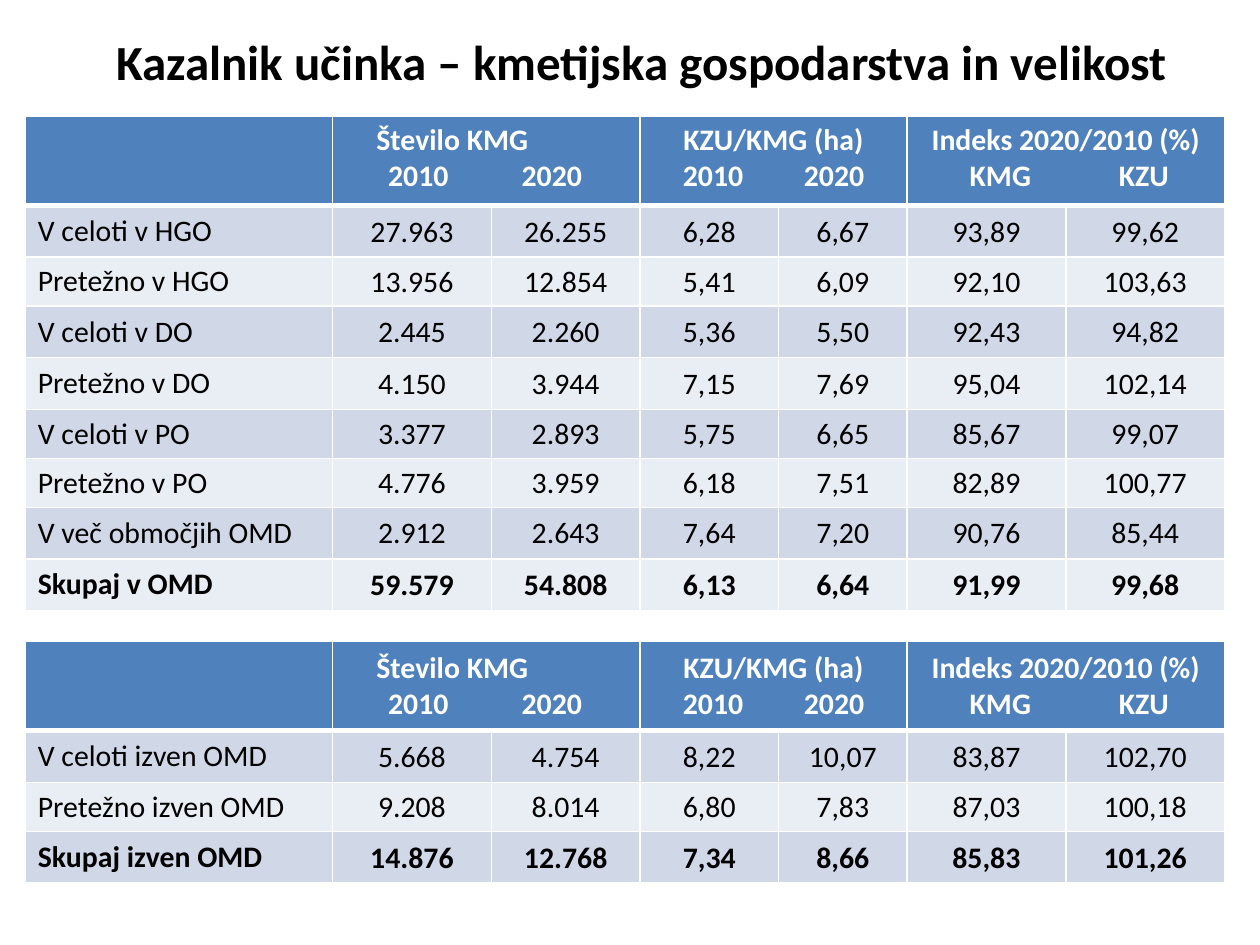
from dataclasses import dataclass

from lxml.etree import SubElement
from pptx import Presentation
from pptx.dml.color import RGBColor as RGB
from pptx.enum.text import MSO_ANCHOR as Anchor, PP_ALIGN as Align
from pptx.oxml.ns import qn
from pptx.util import Inches, Pt


@dataclass(frozen=True)
class Theme:
    font: str = "Calibri"
    title_size: int = 28
    table_size: int = 17
    dark: str = "000000"
    light: str = "FFFFFF"
    header: str = "4F81BD"
    bands: tuple = ("D0D8E8", "E9EDF4")


THEME = Theme()
COLS = (2.44, 1.26, 1.18, 1.1, 1.02, 1.26, 1.26)

# Each group: heading, its tab stop (None = centred), two subheadings, their tab stops
COUNT = ("Število KMG", 0.85, ("2010", "2020"), (0.58, 1.64))
AREA = ("KZU/KMG (ha)", None, ("2010", "2020"), (0.48, 1.44))
INDEX = ("Indeks 2020/2010 (%)", None, ("KMG", "KZU"), (0.64, 1.78))

INSIDE = (
    ("V celoti v HGO", "27.963", "26.255", "6,28", "6,67", "93,89", "99,62"),
    ("Pretežno v HGO", "13.956", "12.854", "5,41", "6,09", "92,10", "103,63"),
    ("V celoti v DO", "2.445", "2.260", "5,36", "5,50", "92,43", "94,82"),
    ("Pretežno v DO", "4.150", "3.944", "7,15", "7,69", "95,04", "102,14"),
    ("V celoti v PO", "3.377", "2.893", "5,75", "6,65", "85,67", "99,07"),
    ("Pretežno v PO", "4.776", "3.959", "6,18", "7,51", "82,89", "100,77"),
    ("V več območjih OMD", "2.912", "2.643", "7,64", "7,20", "90,76", "85,44"),
    ("Skupaj v OMD", "59.579", "54.808", "6,13", "6,64", "91,99", "99,68"),
)
OUTSIDE = (
    ("V celoti izven OMD", "5.668", "4.754", "8,22", "10,07", "83,87", "102,70"),
    ("Pretežno izven OMD", "9.208", "8.014", "6,80", "7,83", "87,03", "100,18"),
    ("Skupaj izven OMD", "14.876", "12.768", "7,34", "8,66", "85,83", "101,26"),
)


def style_text(p, size, color, bold):
    for r in p.runs:
        r.font.name = THEME.font
        r.font.size = Pt(size)
        r.font.bold = bold
        r.font.color.rgb = RGB.from_string(color)


def style_cell(cell, color, top=1, bottom=1):
    """White borders, which must precede the fill in the XML."""
    tc_pr = cell._tc.get_or_add_tcPr()
    for side, width in (("L", 1), ("R", 1), ("T", top), ("B", bottom)):
        ln = SubElement(tc_pr, qn(f"a:ln{side}"), w=str(Pt(width)))
        fill = SubElement(ln, qn("a:solidFill"))
        SubElement(fill, qn("a:srgbClr"), val=THEME.light)
    cell.fill.solid()
    cell.fill.fore_color.rgb = RGB.from_string(color)


def set_tabbed(p, words, stops):
    """Centre each word on its own tab stop."""
    p.text = "".join("\t" + word for word in words)
    p.alignment = Align.LEFT
    tabs = SubElement(p._p.get_or_add_pPr(), qn("a:tabLst"))
    for stop in stops:
        SubElement(tabs, qn("a:tab"), pos=str(Inches(stop)), algn="ctr")


def fill_group(cell, group):
    heading, stop, words, stops = group
    tf = cell.text_frame
    p = tf.paragraphs[0]
    if stop is None:
        p.text = heading
        p.alignment = Align.CENTER
    else:
        set_tabbed(p, [heading], [stop])
    set_tabbed(tf.add_paragraph(), words, stops)
    for p in tf.paragraphs:
        style_text(p, THEME.table_size, THEME.light, True)


def fill_row(table, i, row, bold):
    for j, value in enumerate(row):
        cell = table.cell(i, j)
        style_cell(cell, THEME.bands[(i - 1) % 2], top=3 if i == 1 else 1)
        cell.vertical_anchor = Anchor.MIDDLE
        p = cell.text_frame.paragraphs[0]
        p.text = value
        if j:
            p.alignment = Align.CENTER
            cell.margin_left = cell.margin_right = cell.margin_top = Inches(0.01)
            cell.margin_bottom = 0
        style_text(p, THEME.table_size, THEME.dark, bold)


def add_data_table(s, top, heights, rows, anchor):
    table = s.shapes.add_table(len(rows) + 1, len(COLS), Inches(0.2), Inches(top),
                               Inches(sum(COLS)), Inches(sum(heights))).table
    table.horz_banding = False
    for column, width in zip(table.columns, COLS):
        column.width = Inches(width)
    for row, height in zip(table.rows, heights):
        row.height = Inches(height)

    # Header: an empty corner and three groups of two columns
    for j in range(len(COLS)):
        style_cell(table.cell(0, j), THEME.header, bottom=3)
    for j, group in zip((1, 3, 5), (COUNT, AREA, INDEX)):
        cell = table.cell(0, j)
        cell.merge(table.cell(0, j + 1))
        cell.vertical_anchor = anchor
        fill_group(cell, group)

    # Body: the last row is the total
    for i, row in enumerate(rows, 1):
        fill_row(table, i, row, bold=i == len(rows))


def add_title(s, text):
    title = s.shapes.title
    title.left, title.top = Inches(0.59), Inches(0.21)
    title.width, title.height = Inches(9), Inches(0.55)
    tf = title.text_frame
    tf.text = text
    tf.word_wrap = True
    tf.vertical_anchor = Anchor.MIDDLE
    p = tf.paragraphs[0]
    p.alignment = Align.CENTER
    style_text(p, THEME.title_size, THEME.dark, True)


def main():
    prs = Presentation()
    prs.slide_width, prs.slide_height = Inches(10), Inches(7.5)
    s = prs.slides.add_slide(prs.slide_layouts[5])
    add_title(s, "Kazalnik učinka – kmetijska gospodarstva in velikost")
    add_data_table(s, 0.92, (0.71, 0.41, 0.38, 0.41, 0.41, 0.38, 0.38, 0.41, 0.41),
                   INSIDE, Anchor.TOP)
    add_data_table(s, 5.09, (0.71, 0.41, 0.38, 0.41), OUTSIDE, Anchor.MIDDLE)
    prs.save("out.pptx")


if __name__ == "__main__":
    main()
